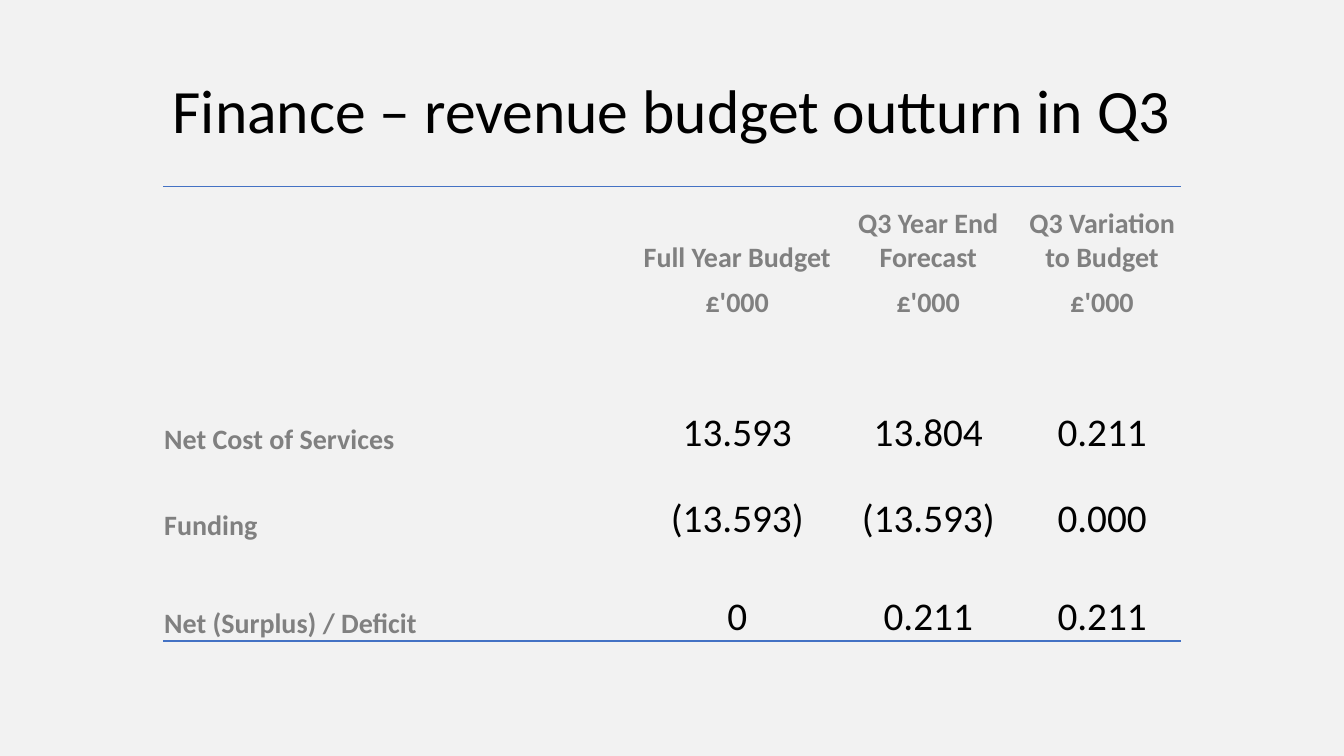
"""Build the Q3 revenue budget outturn slide."""
from lxml.etree import SubElement
from pptx import Presentation
from pptx.dml.color import RGBColor
from pptx.enum.text import MSO_ANCHOR as Anchor, PP_ALIGN as Align
from pptx.oxml import parse_xml
from pptx.oxml.ns import qn
from pptx.util import Pt

BACKGROUND = RGBColor(0xF2, 0xF2, 0xF2)
BLACK = RGBColor(0, 0, 0)
GREY = RGBColor(0x80, 0x80, 0x80)
BLUE = RGBColor(0x44, 0x72, 0xC4)
NO_GRID_STYLE = "{2D5ABB26-0587-4C30-8999-92F81FD0307C}"

COLUMN_WIDTHS = [341.3, 137.5, 135.4, 113]
ROW_HEIGHTS = [63.4, 31.7, 31.7, 31.7, 34.5, 62, 35.2, 34.5]
BUDGET_ROWS = {
    0: ["", "Full Year Budget", "Q3 Year End Forecast", "Q3 Variation to Budget"],
    1: ["", "£'000", "£'000", "£'000"],
    4: ["Net Cost of Services", "13.593", "13.804", "0.211"],
    5: ["Funding", "(13.593)", "(13.593)", "0.000"],
    7: ["Net (Surplus) / Deficit", "0", "0.211", "0.211"],
}
RULES = {0: "a:lnT", 7: "a:lnB"}


def write(frame, text, size, color, bold, align):
    """Fill a text frame with one formatted paragraph."""
    frame.text = text
    paragraph = frame.paragraphs[0]
    paragraph.alignment = align
    for run in paragraph.runs:
        run.font.name = "Calibri"
        run.font.size = Pt(size)
        run.font.bold = bold
        run.font.color.rgb = color


def add_rule(cell, tag):
    """Draw a one-point blue border on one side of a cell."""
    properties = cell._tc.get_or_add_tcPr()
    line = properties.makeelement(qn(tag), {"w": str(Pt(1))})
    fill = SubElement(line, qn("a:solidFill"))
    SubElement(fill, qn("a:srgbClr"), val=str(BLUE))
    properties.insert(0, line)


deck = Presentation()
deck.slide_width, deck.slide_height = Pt(960), Pt(540)
slide = deck.slides.add_slide(deck.slide_layouts[6])
slide.background.fill.solid()
slide.background.fill.fore_color.rgb = BACKGROUND

title = slide.shapes.add_textbox(Pt(66), Pt(28.75), Pt(828), Pt(104.4)).text_frame
title.word_wrap = True
title.vertical_anchor = Anchor.MIDDLE
write(title, "Finance – revenue budget outturn in Q3", 44, BLACK, False, Align.CENTER)
title.paragraphs[0].line_spacing = 0.9

budget = slide.shapes.add_table(
    len(ROW_HEIGHTS), len(COLUMN_WIDTHS), Pt(116.6), Pt(133.2),
    Pt(sum(COLUMN_WIDTHS)), Pt(sum(ROW_HEIGHTS))).table
budget.first_row = budget.horz_banding = False
budget._tbl.tblPr.find(qn("a:tableStyleId")).text = NO_GRID_STYLE
for column, width in zip(budget.columns, COLUMN_WIDTHS):
    column.width = Pt(width)
for row, height in zip(budget.rows, ROW_HEIGHTS):
    row.height = Pt(height)

for r in range(len(ROW_HEIGHTS)):
    for c in range(len(COLUMN_WIDTHS)):
        cell = budget.cell(r, c)
        cell.fill.background()
        cell.vertical_anchor = Anchor.BOTTOM
        cell.margin_left = cell.margin_right = cell.margin_top = Pt(0.7)
        cell.margin_bottom = Pt(0)
        if r in RULES:
            add_rule(cell, RULES[r])
        text = BUDGET_ROWS[r][c] if r in BUDGET_ROWS else ""
        if text:
            is_label = r < 2 or c == 0
            write(cell.text_frame, text, 20 if is_label else 28,
                  GREY if is_label else BLACK, is_label,
                  Align.LEFT if c == 0 else Align.CENTER)

deck.save("out.pptx")
